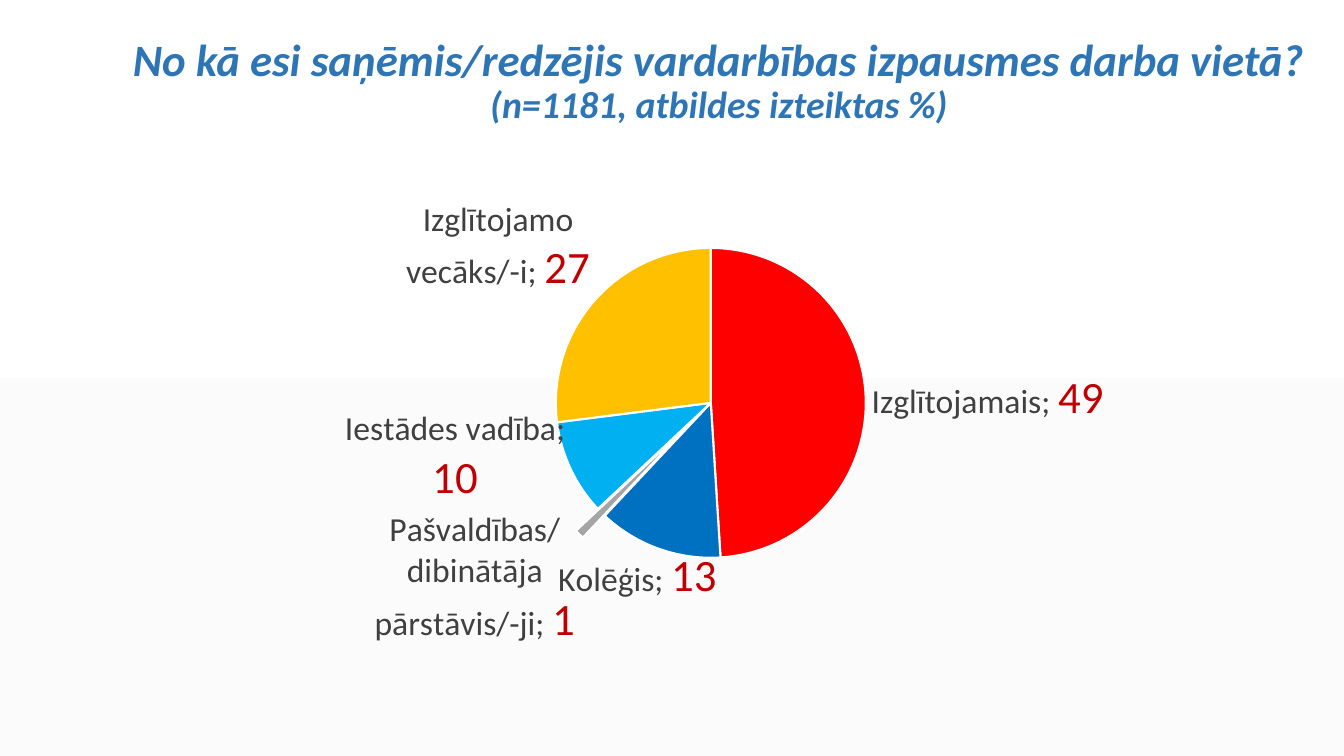
import pptx
import pptx.chart.data
import pptx.dml.color
import pptx.enum.chart
import pptx.enum.text
import pptx.oxml
import pptx.oxml.ns
import pptx.util
from dataclasses import dataclass

Inches = pptx.util.Inches


@dataclass(frozen=True)
class Theme:
    font: str = "Calibri"
    title: str = "2E75B6"
    label: str = "404040"
    number: str = "C00000"
    white: str = "FFFFFF"
    background_end: str = "FBFBFB"
    title_size: int = 32
    subtitle_size: int = 27
    label_size: int = 24
    number_size: int = 32


@dataclass(frozen=True)
class Answer:
    category: str
    percent: int
    color: str
    explosion: int = 0
    label_shift: tuple[float, float] = (0, 0)  # fractions of the chart frame


THEME = Theme()
ANSWERS = [
    Answer("Izglītojamais", 49, "FF0000"),
    Answer("Kolēģis", 13, "0070C0", label_shift=(0.05, -0.01)),
    Answer("Pašvaldības/dibinātāja pārstāvis/-ji", 1, "A5A5A5", 20, (0, -0.05)),
    Answer("Iestādes vadība", 10, "00B0F0", label_shift=(0, -0.11)),
    Answer("Izglītojamo vecāks/-i", 27, "FFC000"),
]
PLOT_LAYOUT = {"layoutTarget": "inner", "xMode": "edge", "yMode": "edge",
               "x": 0.38, "y": 0.17, "w": 0.26, "h": 0.55}


def rgb(value: str) -> pptx.dml.color.RGBColor:
    return pptx.dml.color.RGBColor.from_string(value)


def manual_layout(settings: dict):
    items = "".join(f'<c:{name} val="{value}"/>' for name, value in settings.items())
    return pptx.oxml.parse_xml(
        f'<c:layout {pptx.oxml.ns.nsdecls("c")}><c:manualLayout>{items}</c:manualLayout></c:layout>')


def add_styled_run(paragraph, text: str, size: int, color: str, emphasis: bool = False) -> None:
    run = paragraph.add_run()
    run.text = text
    run.font.name = THEME.font
    run.font.size = pptx.util.Pt(size)
    run.font.bold = run.font.italic = emphasis
    run.font.color.rgb = rgb(color)


def set_background(slide) -> None:
    fill = slide.background.fill
    fill.gradient()
    fill.gradient_angle = 270
    for stop, color, position in zip(fill.gradient_stops, (THEME.white, THEME.background_end), (0, 1)):
        stop.color.rgb = rgb(color)
        stop.position = position


def add_title(slide) -> None:
    box = slide.shapes.add_textbox(Inches(0.92), Inches(0.09), Inches(12.42), Inches(1.45))
    frame = box.text_frame
    frame.word_wrap = True
    frame.vertical_anchor = pptx.enum.text.MSO_ANCHOR.MIDDLE
    paragraph = frame.paragraphs[0]
    paragraph.alignment = pptx.enum.text.PP_ALIGN.CENTER
    paragraph.line_spacing = 0.9
    add_styled_run(paragraph, "No kā esi saņēmis/redzējis vardarbības izpausmes darba vietā? ",
                   THEME.title_size, THEME.title, True)
    add_styled_run(paragraph, "(n=1181, atbildes izteiktas %)", THEME.subtitle_size, THEME.title, True)


def set_plot_layout(chart) -> None:
    """Fix the inner plot area as fractions of the chart frame."""
    plot_area = chart.plots[0]._element.getparent()
    for old_layout in plot_area.findall(pptx.oxml.ns.qn("c:layout")):
        plot_area.remove(old_layout)
    plot_area.insert(0, manual_layout(PLOT_LAYOUT))


def format_slice(point, answer: Answer) -> None:
    point.format.fill.solid()
    point.format.fill.fore_color.rgb = rgb(answer.color)
    point.format.line.color.rgb = rgb(THEME.white)
    point.format.line.width = pptx.util.Pt(1.5)
    if answer.explosion:
        explosion = pptx.oxml.parse_xml(
            f'<c:explosion {pptx.oxml.ns.nsdecls("c")} val="{answer.explosion}"/>')
        point.format._element.find(pptx.oxml.ns.qn("c:spPr")).addprevious(explosion)

    # Category in grey, value in larger red figures
    label = point.data_label
    text_frame = label.text_frame
    paragraph = text_frame.paragraphs[0]
    add_styled_run(paragraph, f"{answer.category}; ", THEME.label_size, THEME.label)
    add_styled_run(paragraph, str(answer.percent), THEME.number_size, THEME.number)
    label.position = pptx.enum.chart.XL_LABEL_POSITION.OUTSIDE_END
    if any(answer.label_shift):
        shift = dict(zip("xy", answer.label_shift))
        text_frame._element.getparent().addprevious(manual_layout(shift))


def add_answer_chart(slide) -> None:
    data = pptx.chart.data.CategoryChartData()
    data.categories = [answer.category for answer in ANSWERS]
    data.add_series("Series 1", [answer.percent for answer in ANSWERS])
    frame = slide.shapes.add_chart(pptx.enum.chart.XL_CHART_TYPE.PIE,
                                   Inches(0.92), Inches(1.51), Inches(12.02), Inches(5.59), data)
    chart = frame.chart
    chart.has_title = False
    chart.has_legend = False
    chart.font.name = THEME.font
    chart.font.size = pptx.util.Pt(10)
    plot = chart.plots[0]
    plot.vary_by_categories = True

    labels = plot.series[0].data_labels
    labels.show_value = labels.show_category_name = True
    labels.position = pptx.enum.chart.XL_LABEL_POSITION.OUTSIDE_END
    labels.font.name = THEME.font
    labels.font.size = pptx.util.Pt(THEME.label_size)
    labels.font.color.rgb = rgb(THEME.label)
    for index, answer in enumerate(ANSWERS):
        format_slice(plot.series[0].points[index], answer)
    set_plot_layout(chart)


def main() -> None:
    presentation = pptx.Presentation()
    presentation.slide_width = Inches(13.33)
    presentation.slide_height = Inches(7.5)
    slide = presentation.slides.add_slide(presentation.slide_layouts[6])
    set_background(slide)
    add_title(slide)
    add_answer_chart(slide)
    presentation.save("out.pptx")


if __name__ == "__main__":
    main()
